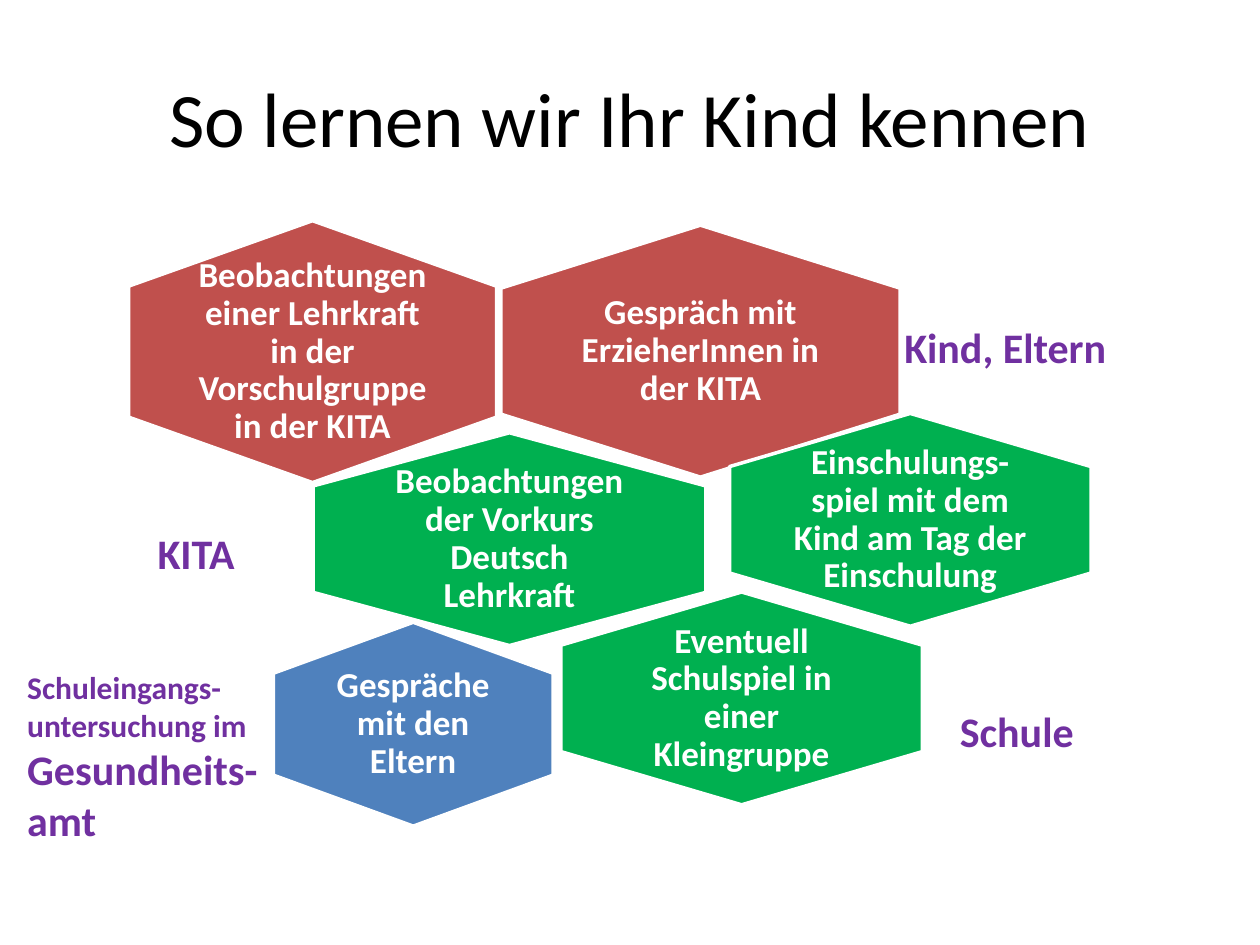
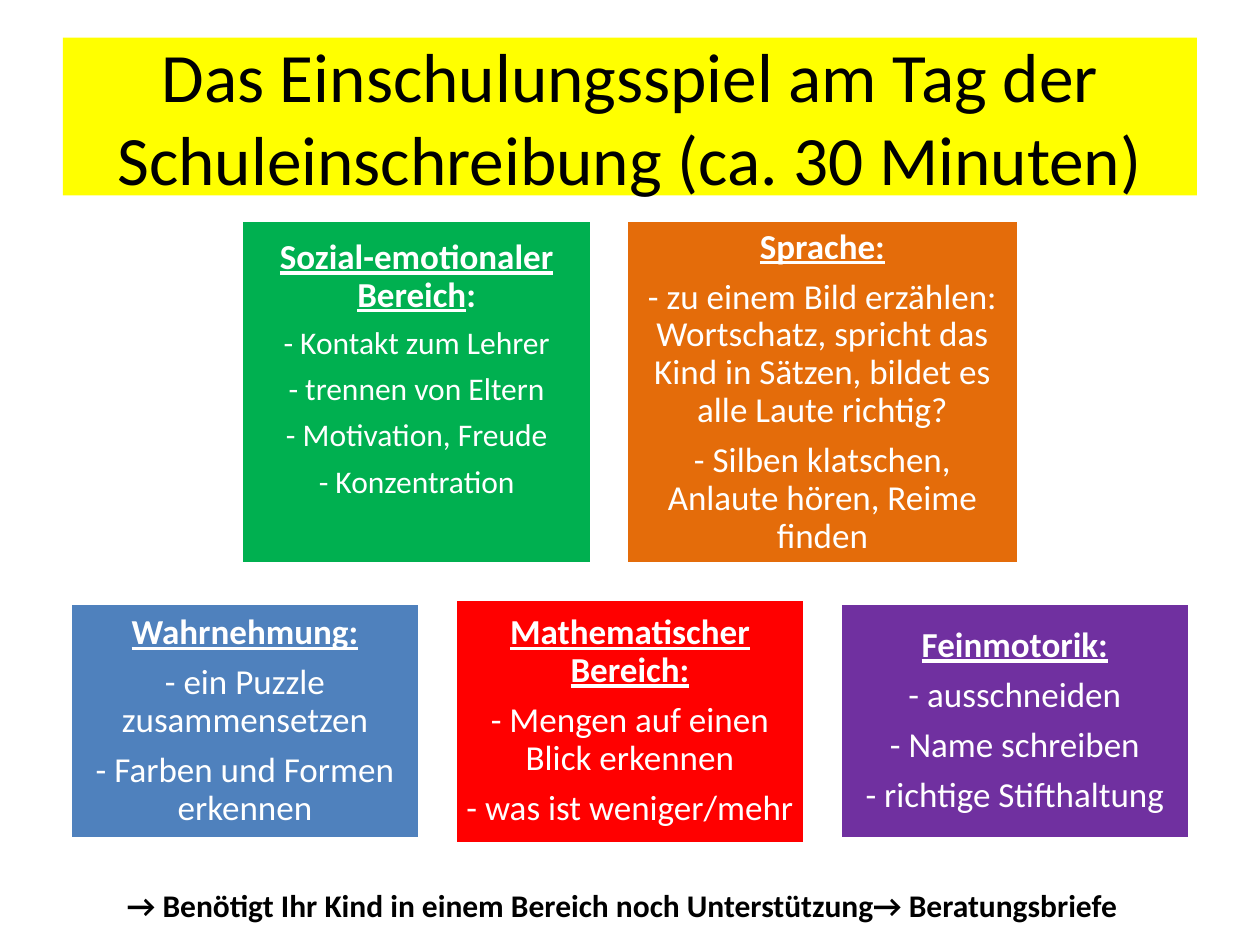
"""Builds two slides on getting to know children before they start school."""
from pptx import Presentation
from pptx.dml.color import RGBColor
from pptx.enum.shapes import MSO_SHAPE
from pptx.enum.text import MSO_ANCHOR, PP_ALIGN
from pptx.util import Cm, Pt

HEXAGON, RECTANGLE = MSO_SHAPE.HEXAGON, MSO_SHAPE.RECTANGLE
LEFT, CENTER, RIGHT = PP_ALIGN.LEFT, PP_ALIGN.CENTER, PP_ALIGN.RIGHT
TOP, MIDDLE = MSO_ANCHOR.TOP, MSO_ANCHOR.MIDDLE

FONT = "Calibri"
COLORS = {
    "black": "000000", "white": "FFFFFF", "yellow": "FFFF00", "brick": "C0504D",
    "green": "00B050", "blue": "4F81BD", "orange": "E46C0A", "red": "FF0000",
    "purple": "7030A0",
}
SLIDE_WIDTH, SLIDE_HEIGHT = 25.4, 19.05
TITLE_BOX = (1.27, 0.76, 22.86, 3.18)
DEFAULT_INSETS = (0.25, 0.13, 0.25, 0.13)
TEXT_SHARE = 2 / 3
CARD_GAP = 0.7

MEETING_TITLE = "So lernen wir Ihr Kind kennen"
# Each entry: text, colour, centre x, centre y, width, height, inset
HEXAGONS = [
    ("Gespräch mit ErzieherInnen in der KITA", "brick", 14.12, 7.08, 8.05, 5.08, 0.2),
    ("Beobachtungen einer Lehrkraft in der Vorschulgruppe in der KITA",
     "brick", 6.3, 7.09, 7.42, 5.28, 0),
    ("Beobachtungen der Vorkurs Deutsch Lehrkraft", "green", 10.27, 10.87, 7.92, 4.29, 0.2),
    ("Einschulungs-spiel mit dem Kind am Tag der Einschulung",
     "green", 18.35, 10.48, 7.29, 4.29, 0),
    ("Eventuell Schulspiel in einer Kleingruppe", "green", 14.95, 14.08, 7.29, 4.29, 0.2),
    ("Gespräche mit den Eltern", "blue", 8.33, 14.6, 5.64, 4.11, 0),
]
LABELS = [
    ("Kind, Eltern", (17.6, 5.77, 5.38, 2.57), LEFT, 0.63),
    ("KITA", (2.11, 9.93, 2.87, 2.57), RIGHT, 0.25),
    ("Schule", (19.1, 13.51, 4.78, 2.57), LEFT, 0.25),
]
HEALTH_OFFICE = [("Schuleingangs-untersuchung im ", {"size": 18}), ("Gesundheits-amt", {})]
HEALTH_OFFICE_BOX = (0.3, 13.34, 5.41, 3.84)

GAME_TITLE = "Das Einschulungsspiel am Tag der Schuleinschreibung (ca. 30 Minuten)"
HEADING = {"bold": True, "underline": True}
CARD_ROWS = [
    {"middle": 7.91, "cards": [
        {"color": "green", "width": 7.06, "height": 6.93, "size": 18, "bottom": 1.12,
         "heading": [("Sozial-emotionaler Bereich", {**HEADING, "size": 20}),
                     (":", {"bold": True, "size": 20})],
         "points": ["- Kontakt zum Lehrer", "- trennen von Eltern",
                    "- Motivation, Freude", "- Konzentration"]},
        {"color": "orange", "width": 7.9, "height": 6.93,
         "heading": [("Sprache:", HEADING)],
         "points": ["- zu einem Bild erzählen: Wortschatz, spricht das Kind in Sätzen, "
                    "bildet es alle Laute richtig?",
                    "- Silben klatschen, Anlaute hören, Reime finden"]},
    ]},
    {"middle": 14.54, "cards": [
        {"color": "blue", "width": 7.06, "height": 4.75,
         "heading": [("Wahrnehmung:", HEADING)],
         "points": ["- ein Puzzle zusammensetzen", "- Farben und Formen erkennen"]},
        {"color": "red", "width": 7.06, "height": 4.93,
         "heading": [("Mathematischer Bereich:", HEADING)],
         "points": ["- Mengen auf einen Blick erkennen", "- was ist weniger/mehr"]},
        {"color": "purple", "width": 7.06, "height": 4.75,
         "heading": [("Feinmotorik:", HEADING)],
         "points": ["- ausschneiden", "- Name schreiben", "- richtige Stifthaltung"]},
    ]},
]
CONCLUSION = "→ Benötigt Ihr Kind in einem Bereich noch Unterstützung→ Beratungsbriefe"
CONCLUSION_BOX = (2.31, 17.73, 21.79, 1.02)


def rgb(name):
    return RGBColor.from_string(COLORS[name])


def write(shape, paragraphs, size=20, color="white", bold=False, align=CENTER,
          anchor=MIDDLE, insets=DEFAULT_INSETS, line_spacing=None, space_after=0):
    frame = shape.text_frame
    frame.word_wrap = True
    frame.vertical_anchor = anchor
    frame.margin_left, frame.margin_top, frame.margin_right, frame.margin_bottom = map(Cm, insets)
    for index, content in enumerate(paragraphs):
        paragraph = frame.add_paragraph() if index else frame.paragraphs[0]
        paragraph.alignment = align
        paragraph.line_spacing = line_spacing
        paragraph.space_after = Pt(space_after)
        runs = [(content, {})] if isinstance(content, str) else content
        for text, changes in runs:
            run = paragraph.add_run()
            run.text = text
            run.font.name = FONT
            run.font.size = Pt(changes.get("size", size))
            run.font.bold = changes.get("bold", bold)
            run.font.underline = changes.get("underline", False)
            run.font.color.rgb = rgb(color)


def add_text(slide, box, paragraphs, **text_format):
    shape = slide.shapes.add_textbox(*map(Cm, box))
    write(shape, paragraphs, **text_format)
    return shape


def add_title(slide, text, size, band=None):
    title = add_text(slide, TITLE_BOX, [text], size=size, color="black")
    if band:
        title.fill.solid()
        title.fill.fore_color.rgb = rgb(band)


def centered_box(center_x, center_y, width, height):
    return center_x - width / 2, center_y - height / 2, width, height


def add_block(slide, kind, box, color):
    shape = slide.shapes.add_shape(kind, *map(Cm, box))
    shape.shadow.inherit = False
    shape.fill.solid()
    shape.fill.fore_color.rgb = rgb(color)
    shape.line.color.rgb = rgb("white")
    shape.line.width = Pt(2)
    return shape


def add_hexagon(slide, text, color, center_x, center_y, width, height, inset):
    box = centered_box(center_x, center_y, height, width)
    hexagon = add_block(slide, HEXAGON, box, color)
    hexagon.adjustments[0] = 0.25
    hexagon.rotation = 90
    text_box = centered_box(center_x, center_y, width * TEXT_SHARE, height * TEXT_SHARE)
    add_text(slide, text_box, [text], bold=True, insets=(inset,) * 4, line_spacing=0.9)


def add_card_row(slide, middle, cards):
    total = sum(card["width"] for card in cards) + CARD_GAP * (len(cards) - 1)
    left = (SLIDE_WIDTH - total) / 2
    for card in cards:
        width, height = card["width"], card["height"]
        box = (left, middle - height / 2, width, height)
        shape = add_block(slide, RECTANGLE, box, card["color"])
        write(shape, [card["heading"], *card["points"]], size=card.get("size", 20),
              insets=(0.2, 0.2, 0.2, card.get("bottom", 0.2)),
              line_spacing=0.9, space_after=7)
        left += width + CARD_GAP


def build_meeting_slide(slide):
    add_title(slide, MEETING_TITLE, 44)
    for hexagon in HEXAGONS:
        add_hexagon(slide, *hexagon)
    for text, box, align, left_inset in LABELS:
        add_text(slide, box, [text], size=24, color="purple", bold=True, align=align,
                 insets=(left_inset, 0.25, 0.25, 0.25), line_spacing=0.9)
    add_text(slide, HEALTH_OFFICE_BOX, [HEALTH_OFFICE], size=24, color="purple",
             bold=True, align=LEFT, anchor=TOP)


def build_game_slide(slide):
    add_title(slide, GAME_TITLE, 39.6, band="yellow")
    for row in CARD_ROWS:
        add_card_row(slide, **row)
    add_text(slide, CONCLUSION_BOX, [CONCLUSION], size=18, color="black", bold=True,
             align=LEFT, anchor=TOP)


def main():
    presentation = Presentation()
    presentation.slide_width, presentation.slide_height = Cm(SLIDE_WIDTH), Cm(SLIDE_HEIGHT)
    blank = presentation.slide_layouts[6]
    for build in (build_meeting_slide, build_game_slide):
        build(presentation.slides.add_slide(blank))
    presentation.save("out.pptx")


if __name__ == "__main__":
    main()
